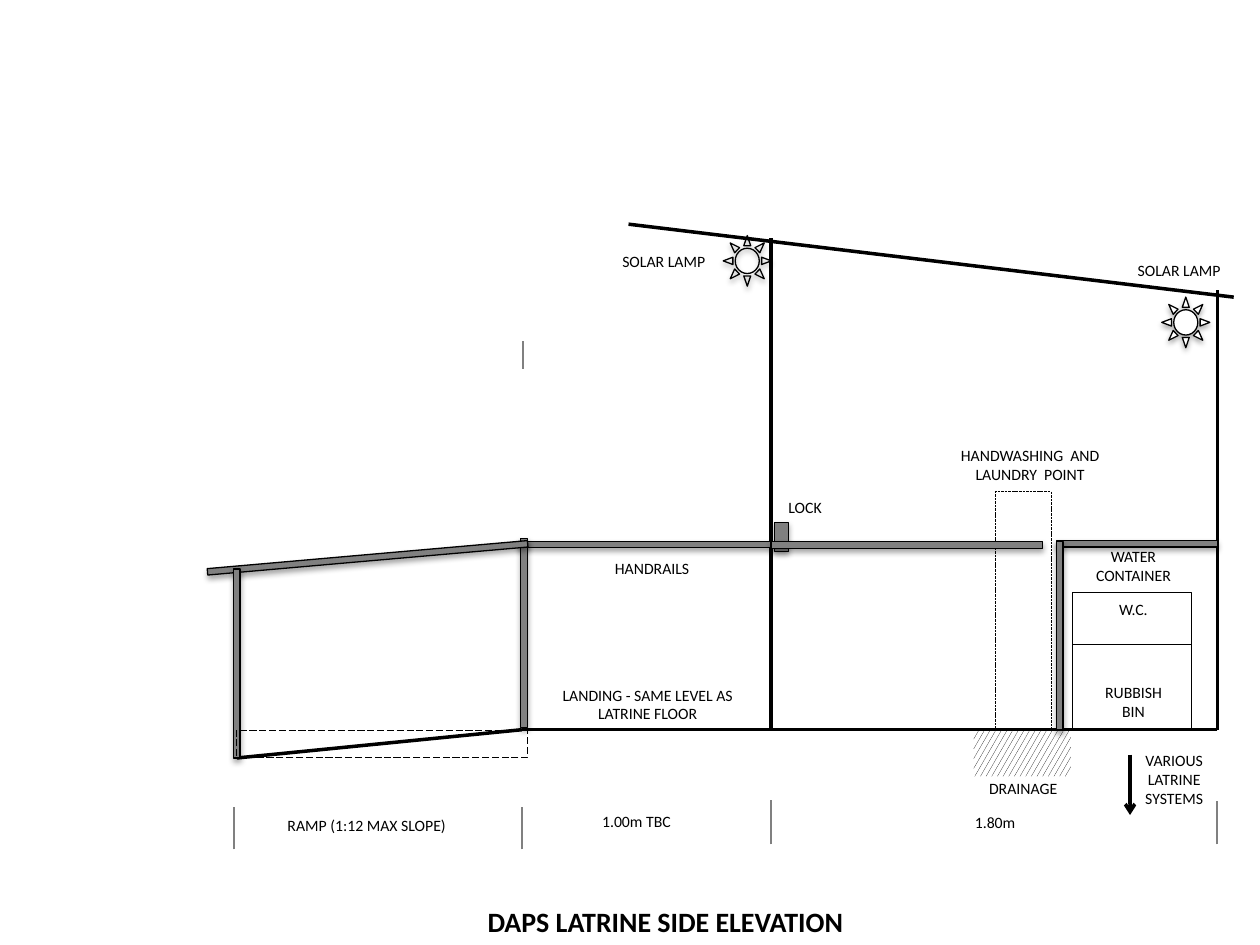
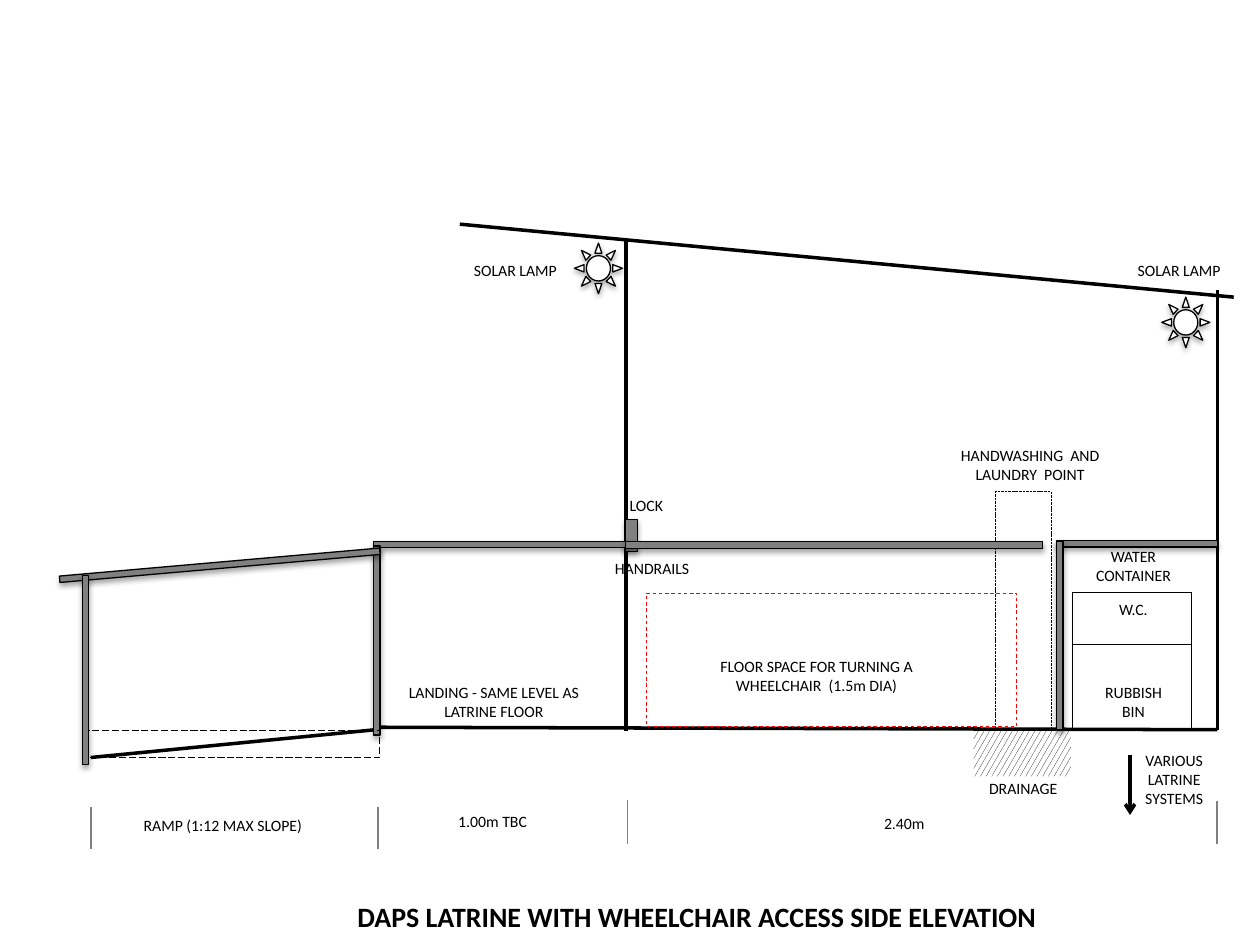
from dataclasses import dataclass

from lxml import etree
from pptx import Presentation
from pptx.dml.color import RGBColor
from pptx.enum.dml import MSO_LINE, MSO_PATTERN
from pptx.enum.shapes import MSO_CONNECTOR, MSO_SHAPE
from pptx.enum.text import MSO_ANCHOR, MSO_AUTO_SIZE, PP_ALIGN
from pptx.oxml.ns import qn
from pptx.util import Cm, Pt

RECTANGLE = MSO_SHAPE.RECTANGLE
SUN = MSO_SHAPE.SUN
STRAIGHT = MSO_CONNECTOR.STRAIGHT
DASH = MSO_LINE.DASH
LONG_DASH = MSO_LINE.LONG_DASH
SHORT_DASH = MSO_LINE.SQUARE_DOT
CONFETTI = MSO_PATTERN.LARGE_CONFETTI
CENTER = PP_ALIGN.CENTER
TOP = MSO_ANCHOR.TOP
GROW = MSO_AUTO_SIZE.SHAPE_TO_FIT_TEXT
TITLE_ONLY = 5
BOTTOM_SIDE = 2


@dataclass(frozen=True)
class Theme:
    font: str = "Calibri"
    ink: RGBColor = RGBColor(0, 0, 0)
    paper: RGBColor = RGBColor(255, 255, 255)
    timber: RGBColor = RGBColor(128, 128, 128)
    turning: RGBColor = RGBColor(255, 0, 0)
    title_size: Pt = Pt(16)
    label_size: Pt = Pt(9)
    wall: Pt = Pt(2)
    tick: Pt = Pt(1)
    bar: Pt = Pt(0.75)
    frame: Pt = Pt(0.5)


theme = Theme()


def add_box(slide, frame, fill=None, color=theme.ink, weight=theme.frame,
            dash=None, geometry=RECTANGLE, rotation=0, shaded=False):
    shape = slide.shapes.add_shape(geometry, *[Cm(length) for length in frame])
    shape.rotation = rotation
    shape.shadow.inherit = False
    if fill is None:
        shape.fill.background()
    else:
        shape.fill.solid()
        shape.fill.fore_color.rgb = fill
    shape.line.color.rgb = color
    shape.line.width = weight
    if dash is not None:
        shape.line.dash_style = dash
    if shaded:
        effects = shape._element.spPr.find(qn("a:effectLst"))
        shadow = etree.SubElement(effects, qn("a:outerShdw"), blurRad="40000",
                                  dist="23000", dir="5400000", rotWithShape="0")
        shadow_color = etree.SubElement(shadow, qn("a:srgbClr"), val=str(theme.ink))
        etree.SubElement(shadow_color, qn("a:alpha"), val="35000")
    return shape


def write_text(shape, text, size, bold=False, fill=None):
    if fill is not None:
        shape.fill.solid()
        shape.fill.fore_color.rgb = fill
    frame = shape.text_frame
    frame.word_wrap = True
    frame.auto_size = GROW
    frame.vertical_anchor = TOP
    for index, line in enumerate(text.split("\n")):
        paragraph = frame.add_paragraph() if index else frame.paragraphs[0]
        paragraph.alignment = CENTER
        run = paragraph.add_run()
        run.text = line
        run.font.name = theme.font
        run.font.size = size
        run.font.bold = bold
        run.font.color.rgb = theme.ink


drainage_pit = (20.14, 14.2, 0.94, 1.96)
shared_frames = [
    ((21.62, 13, 2.41, 1.7), None),
    ((21.62, 11.94, 2.41, 2.77), None),
    ((20.07, 9.91, 1.12, 4.8), SHORT_DASH),
]
shared_labels = [
    ("HANDRAILS", (11.71, 11.13, 2.87, 0.64), None),
    ("SOLAR LAMP", (22.68, 5.13, 2.18, 0.64), None),
    ("RUBBISH\nBIN", (21.67, 13.64, 2.36, 1.02), None),
    ("WATER CONTAINER", (21.67, 10.9, 2.36, 1.02), None),
    ("W.C.", (21.67, 11.96, 2.36, 0.64), None),
    ("DRAINAGE", (19.66, 15.57, 1.93, 0.64), None),
    ("HANDWASHING  AND LAUNDRY  POINT", (19.1, 8.86, 3.33, 1.02), None),
    ("VARIOUS LATRINE SYSTEMS", (22.78, 15.01, 1.78, 1.42), None),
]
shared_ticks = [(24.54, 17.02, 24.54, 16.15)]
outlet_arrow = (22.78, 15.21, 22.78, 16.43)
shared_walls = [(24.54, 14.71, 24.54, 5.84)]
shared_bars = [
    ((21.31, 10.9, 3.23, 0.13), 0),
    ((21.3, 10.91, 0.13, 3.81), 0),
]
shared_lamp = ((23.42, 5.99, 0.97, 1.02), theme.paper)

drawings = [
    {
        "title": "DAPS LATRINE SIDE ELEVATION",
        "title_frame": (6.76, 18.11, 13.31, 0.94),
        "labels": [
            ("1.80m", (17.37, 16.26, 5.38, 0.64), None),
            ("1.00m TBC", (9.63, 16.23, 6.4, 0.64), None),
            ("SOLAR LAMP", (12.29, 4.95, 2.18, 0.64), None),
            ("LOCK", (14.78, 9.91, 2.9, 0.64), None),
            ("RAMP (1:12 MAX SLOPE)", (4.7, 16.31, 5.38, 0.64), theme.paper),
            ("LANDING - SAME LEVEL AS LATRINE FLOOR", (10.87, 13.69, 4.37, 1.02), None),
        ],
        "ticks": [
            (10.54, 6.88, 10.54, 7.44),
            (15.54, 17.02, 15.54, 16.13),
            (10.52, 17.12, 10.52, 16.26),
            (4.72, 17.12, 4.72, 16.26),
        ],
        "walls": [
            (24.87, 5.99, 12.67, 4.52),
            (15.54, 14.71, 15.54, 4.8),
            (24.54, 14.71, 10.52, 14.71),
            (10.52, 14.71, 4.78, 15.27),
        ],
        "bars": [
            ((15.62, 10.54, 0.28, 0.58), 0),
            ((10.45, 10.91, 5.08, 0.13), 0),
            ((15.56, 10.91, 5.46, 0.15), 0),
            ((10.5, 10.86, 0.13, 3.81), 0),
            ((4.17, 11.18, 6.48, 0.13), -5),
            ((4.71, 11.47, 0.13, 3.81), 0),
        ],
        "ramp_meets_post": True,
        "lamp": ((14.58, 4.75, 0.97, 1.02), None),
        "frames": [((4.76, 14.72, 5.87, 0.56), theme.ink, LONG_DASH)],
    },
    {
        "title": "DAPS LATRINE WITH WHEELCHAIR ACCESS SIDE ELEVATION",
        "title_frame": (3.51, 18.01, 21.08, 0.94),
        "labels": [
            ("2.40m", (15.54, 16.28, 5.38, 0.64), None),
            ("1.00m TBC", (6.73, 16.23, 6.4, 0.64), None),
            ("SOLAR LAMP", (9.3, 5.13, 2.18, 0.64), None),
            ("LOCK", (11.58, 9.86, 2.9, 0.64), None),
            ("RAMP (1:12 MAX SLOPE)", (1.8, 16.31, 5.38, 0.64), theme.paper),
            ("LANDING - SAME LEVEL AS LATRINE FLOOR", (7.77, 13.64, 4.37, 1.02), None),
            ("FLOOR SPACE FOR TURNING A WHEELCHAIR  (1.5m DIA)",
             (14.15, 13.11, 4.62, 1.02), theme.paper),
        ],
        "ticks": [
            (12.65, 17.02, 12.65, 16.13),
            (7.62, 17.12, 7.62, 16.26),
            (1.83, 17.12, 1.83, 16.26),
        ],
        "walls": [
            (24.87, 5.99, 9.27, 4.52),
            (12.62, 14.73, 12.62, 4.83),
            (24.54, 14.71, 7.57, 14.66),
            (7.57, 14.71, 1.83, 15.27),
        ],
        "bars": [
            ((12.61, 10.48, 0.25, 0.64), 0),
            ((7.53, 10.91, 5.08, 0.13), 0),
            ((12.61, 10.91, 8.41, 0.15), 0),
            ((7.53, 11.01, 0.13, 3.81), 0),
            ((1.19, 11.33, 6.48, 0.13), -5),
            ((1.66, 11.6, 0.13, 3.81), 0),
        ],
        "ramp_meets_post": False,
        "lamp": ((11.58, 4.9, 0.97, 1.02), theme.paper),
        "frames": [
            ((1.79, 14.72, 5.87, 0.56), theme.ink, LONG_DASH),
            ((13.03, 11.96, 7.47, 2.69), theme.turning, DASH),
        ],
    },
]

presentation = Presentation()
presentation.slide_width = Cm(25.4)
presentation.slide_height = Cm(19.05)

for drawing in drawings:
    slide = presentation.slides.add_slide(presentation.slide_layouts[TITLE_ONLY])

    title = slide.shapes.title
    title.left, title.top, title.width, title.height = [
        Cm(length) for length in drawing["title_frame"]]
    write_text(title, drawing["title"], theme.title_size, True, theme.paper)

    drainage = add_box(slide, drainage_pit, rotation=270)
    drainage.fill.patterned()
    drainage.fill.pattern = CONFETTI
    drainage.fill.fore_color.rgb = theme.ink
    drainage.fill.back_color.rgb = theme.paper
    drainage.line.fill.background()

    for frame, dash in shared_frames:
        add_box(slide, frame, dash=dash)

    for text, frame, fill in shared_labels + drawing["labels"]:
        label = slide.shapes.add_textbox(*[Cm(length) for length in frame])
        write_text(label, text, theme.label_size, fill=fill)

    for lamp, fill in (shared_lamp, drawing["lamp"]):
        add_box(slide, lamp, fill, weight=theme.bar, geometry=SUN, shaded=True)

    ticks = [(ends, theme.timber, theme.tick) for ends in shared_ticks + drawing["ticks"]]
    walls = [(ends, theme.ink, theme.wall)
             for ends in [outlet_arrow] + shared_walls + drawing["walls"]]
    for ends, color, weight in ticks + walls:
        connector = slide.shapes.add_connector(STRAIGHT, *[Cm(length) for length in ends])
        connector.line.color.rgb = color
        connector.line.width = weight
        properties = connector._element.spPr
        if ends == outlet_arrow:
            etree.SubElement(properties.find(qn("a:ln")), qn("a:tailEnd"), type="arrow")
        etree.SubElement(properties, qn("a:effectLst"))
    ramp = connector

    for frame, rotation in shared_bars + drawing["bars"]:
        bar = add_box(slide, frame, theme.timber, weight=theme.bar,
                      rotation=rotation, shaded=True)
    ramp_post = bar
    if drawing["ramp_meets_post"]:
        ramp.end_connect(ramp_post, BOTTOM_SIDE)

    for frame, color, dash in drawing["frames"]:
        add_box(slide, frame, color=color, dash=dash)

presentation.save("out.pptx")
